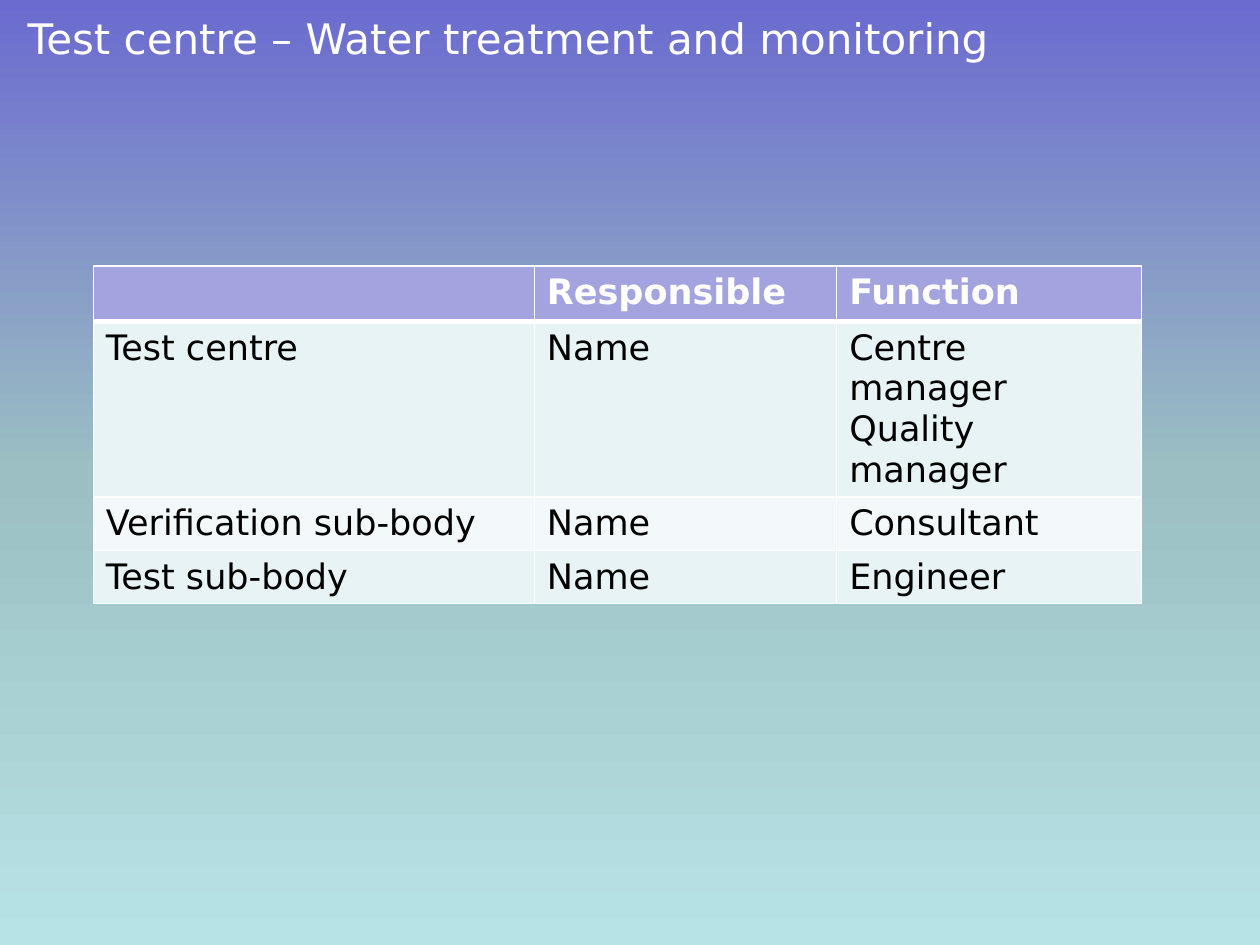
from copy import deepcopy

from lxml import etree
from pptx import Presentation
from pptx import util as u
from pptx.dml.color import RGBColor
from pptx.enum import text
from pptx.oxml import ns

FONT = "DejaVu Sans"
WHITE = RGBColor(0xFF, 0xFF, 0xFF)
BLACK = RGBColor(0, 0, 0)
HEADER = RGBColor(0xA3, 0xA3, 0xE0)
BANDS = [RGBColor(0xE7, 0xF3, 0xF4), RGBColor(0xF3, 0xF9, 0xFA)]
GRADIENT = [
    (0, RGBColor(0x6B, 0x6B, 0xCF)),
    (0.5, RGBColor(0x9B, 0xBF, 0xC2)),
    (1, RGBColor(0xB8, 0xE3, 0xE6)),
]

COLUMN_WIDTHS = [3.5, 2.4, 2.42]
ROW_HEIGHTS = [0.42, 1.39, 0.42, 0.42]
ROWS = [
    ["", "Responsible", "Function"],
    ["Test centre", "Name", "Centre manager Quality manager"],
    ["Verification sub-body", "Name", "Consultant"],
    ["Test sub-body", "Name", "Engineer"],
]


def format_text(para, size, color, bold=False):
    para.font.size = u.Pt(size)
    for span in para.runs:
        span.font.name = FONT
        span.font.size = u.Pt(size)
        span.font.bold = bold
        span.font.color.rgb = color


def paint_background(page):
    fill = page.background.fill
    fill.gradient()
    fill.gradient_angle = 270
    # The default gradient has two stops; add a third
    stop_list = page.element.find(".//" + ns.qn("a:gsLst"))
    stop_list.append(deepcopy(stop_list[-1]))
    for stop, (position, color) in zip(fill.gradient_stops, GRADIENT):
        stop.position = position
        stop.color.rgb = color


def add_title(page, wording):
    title = page.shapes.title
    title.left, title.top = u.Inches(0.12), u.Inches(0)
    title.width, title.height = u.Inches(8.98), u.Inches(0.6)
    frame = title.text_frame
    frame.text = wording
    frame.vertical_anchor = text.MSO_ANCHOR.MIDDLE
    frame.paragraphs[0].alignment = text.PP_ALIGN.LEFT
    format_text(frame.paragraphs[0], 24, WHITE)


def set_borders(cell, widths):
    properties = cell._tc.get_or_add_tcPr()
    for index, (side, width) in enumerate(widths.items()):
        line = etree.Element(ns.qn("a:ln" + side), w=str(u.Pt(width)))
        solid = etree.SubElement(line, ns.qn("a:solidFill"))
        etree.SubElement(solid, ns.qn("a:srgbClr"), val=str(WHITE))
        properties.insert(index, line)


def add_staff_table(page):
    frame = page.shapes.add_table(
        len(ROWS), len(COLUMN_WIDTHS), u.Inches(0.74), u.Inches(2.11),
        u.Inches(sum(COLUMN_WIDTHS)), u.Inches(sum(ROW_HEIGHTS)))
    table = frame.table
    for column, width in zip(table.columns, COLUMN_WIDTHS):
        column.width = u.Inches(width)
    for row, height in zip(table.rows, ROW_HEIGHTS):
        row.height = u.Inches(height)

    for r, labels in enumerate(ROWS):
        is_header = r == 0
        for c, label in enumerate(labels):
            cell = table.cell(r, c)
            cell.text = label
            format_text(cell.text_frame.paragraphs[0], 20,
                        WHITE if is_header else BLACK, is_header)
            cell.fill.solid()
            cell.fill.fore_color.rgb = HEADER if is_header else BANDS[(r - 1) % 2]
            # A thick rule separates the header from the body
            set_borders(cell, {"L": 1, "R": 1, "T": 3 if r == 1 else 1,
                               "B": 3 if is_header else 1})


def main():
    deck = Presentation()
    deck.slide_width, deck.slide_height = u.Inches(10), u.Inches(7.5)
    page = deck.slides.add_slide(deck.slide_layouts.get_by_name("Title Only"))
    paint_background(page)
    add_title(page, "Test centre – Water treatment and monitoring")
    add_staff_table(page)
    deck.save("out.pptx")


if __name__ == "__main__":
    main()
